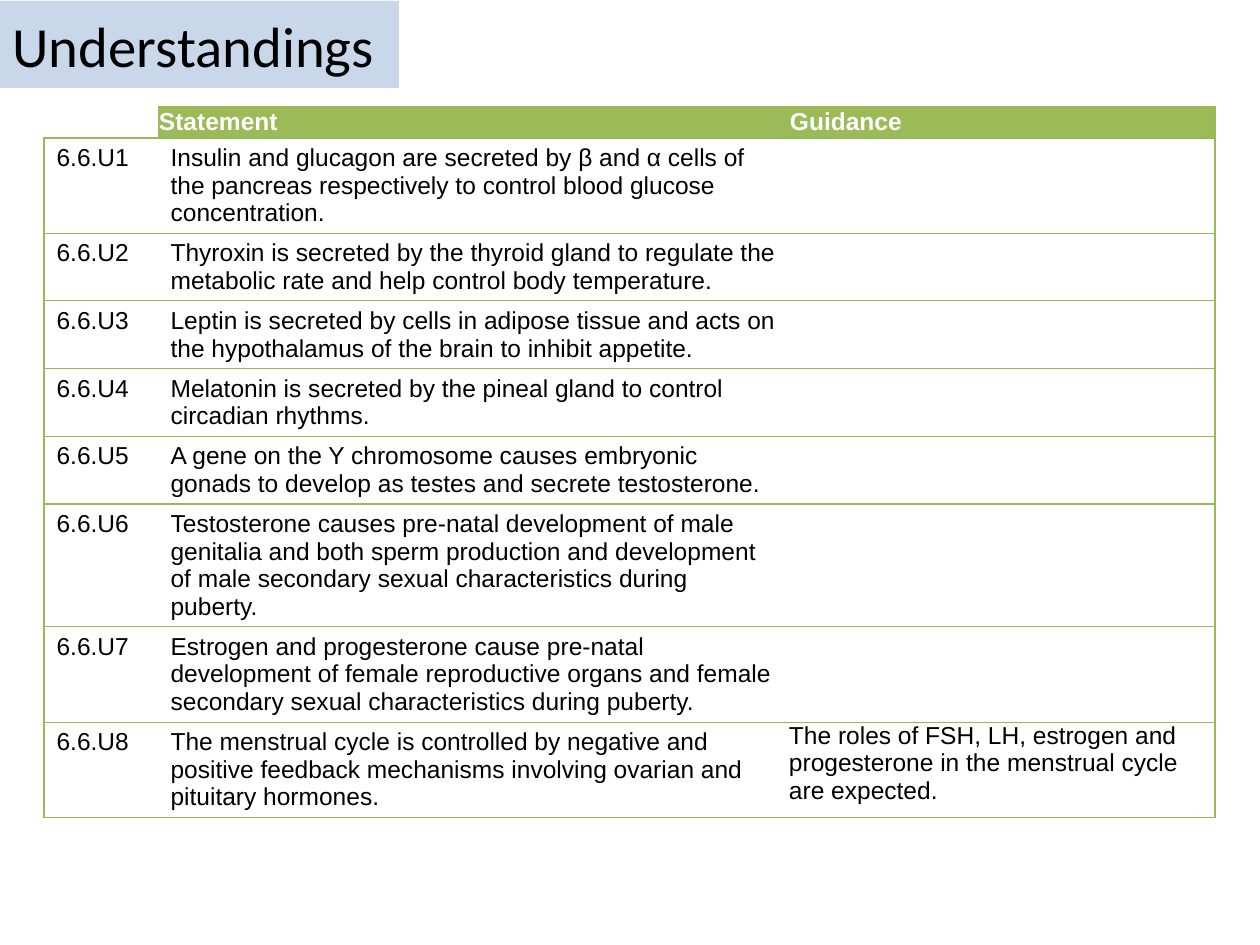
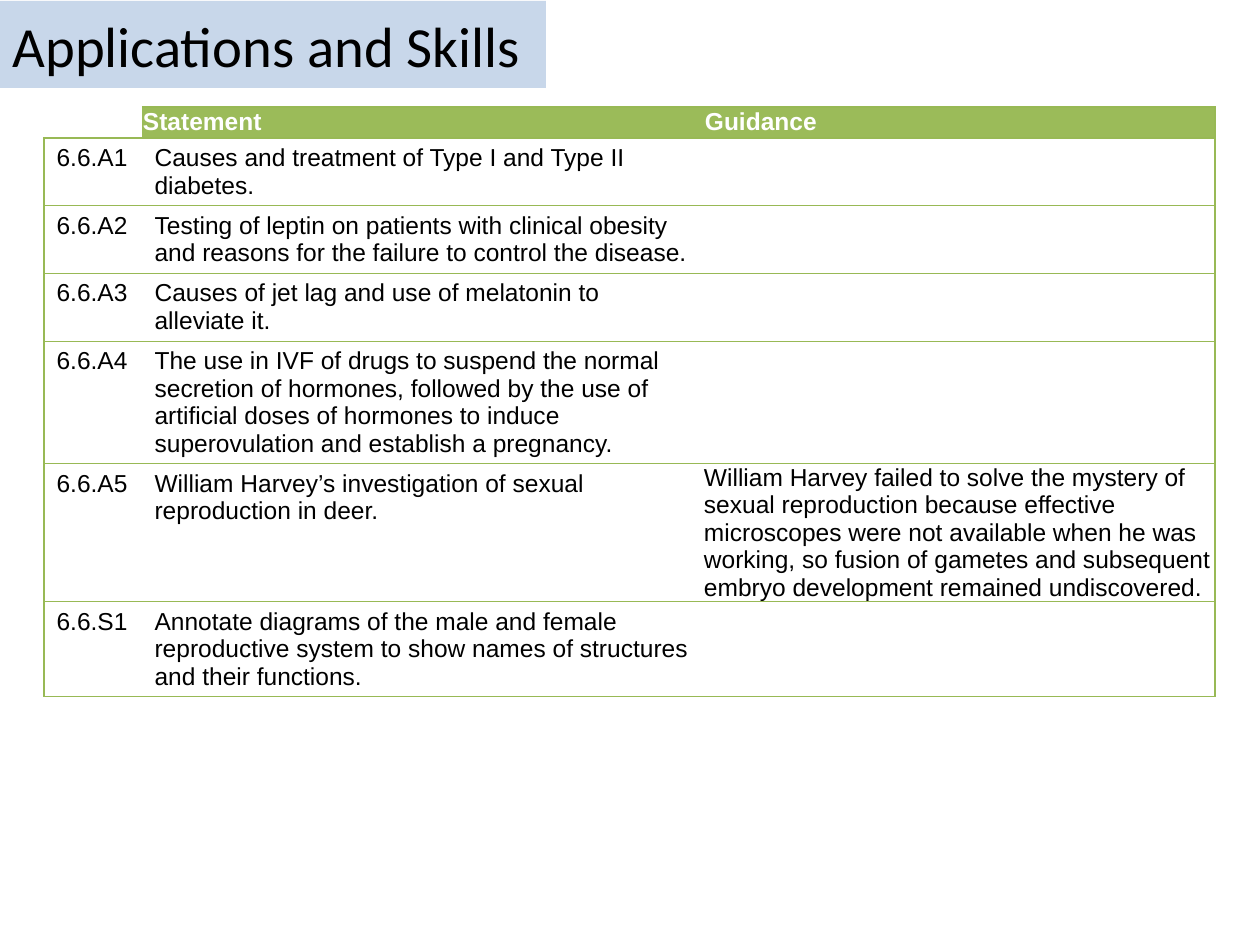
import pptx
import pptx.util
import pptx.dml.color
import pptx.enum.text
import pptx.oxml
import pptx.oxml.ns

PX = pptx.util.Inches(1) / 126
TITLE_ONLY = 5
NO_GRID_STYLE = "{2D5ABB26-0587-4C30-8999-92F81FD0307C}"
BODY_FONT = "Arial"
BODY_SIZE = 14
COLOURS = {
    "title_band": "B9CDE5",
    "header": "9BBB59",
    "rule": "98B955",
    "paper": "FFFFFF",
    "ink": "000000",
}
TABLE_LEFT, TABLE_TOP, HEADER_HEIGHT = 44, 107, 31

UNDERSTANDINGS = [
    ("6.6.U1", "Insulin and glucagon are secreted by β and α cells of the pancreas "
     "respectively to control blood glucose concentration.", "", 95),
    ("6.6.U2", "Thyroxin is secreted by the thyroid gland to regulate the metabolic "
     "rate and help control body temperature.", "", 67),
    ("6.6.U3", "Leptin is secreted by cells in adipose tissue and acts on the "
     "hypothalamus of the brain to inhibit appetite.", "", 67),
    ("6.6.U4", "Melatonin is secreted by the pineal gland to control circadian "
     "rhythms.", "", 67),
    ("6.6.U5", "A gene on the Y chromosome causes embryonic gonads to develop as "
     "testes and secrete testosterone.", "", 67),
    ("6.6.U6", "Testosterone causes pre-natal development of male genitalia and both "
     "sperm production and development of male secondary sexual characteristics "
     "during puberty.", "", 122),
    ("6.6.U7", "Estrogen and progesterone cause pre-natal development of female "
     "reproductive organs and female secondary sexual characteristics during "
     "puberty.", "", 95),
    ("6.6.U8", "The menstrual cycle is controlled by negative and positive feedback "
     "mechanisms involving ovarian and pituitary hormones.",
     "The roles of FSH, LH, estrogen and progesterone in the menstrual cycle are "
     "expected.", 95),
]

APPLICATIONS = [
    ("6.6.A1", "Causes and treatment of Type I and Type II diabetes.", "", 67),
    ("6.6.A2", "Testing of leptin on patients with clinical obesity and reasons for "
     "the failure to control the disease.", "", 67),
    ("6.6.A3", "Causes of jet lag and use of melatonin to alleviate it.", "", 67),
    ("6.6.A4", "The use in IVF of drugs to suspend the normal secretion of hormones, "
     "followed by the use of artificial doses of hormones to induce superovulation "
     "and establish a pregnancy.", "", 122),
    ("6.6.A5", "William Harvey’s investigation of sexual reproduction in deer.",
     "William Harvey failed to solve the mystery of sexual reproduction because "
     "effective microscopes were not available when he was working, so fusion of "
     "gametes and subsequent embryo development remained undiscovered.", 137),
    ("6.6.S1", "Annotate diagrams of the male and female reproductive system to show "
     "names of structures and their functions.", "", 95),
]


def px(length):
    return round(length * PX)


def rgb(name):
    return pptx.dml.color.RGBColor.from_string(COLOURS[name])


def write_text(frame, text, font=BODY_FONT, size=BODY_SIZE, colour="ink", bold=False):
    paragraph = frame.paragraphs[0]
    paragraph.alignment = pptx.enum.text.PP_ALIGN.LEFT
    if not text:
        end = pptx.oxml.ns.qn("a:endParaRPr")
        paragraph._p.append(paragraph._p.makeelement(end, {"sz": str(size * 100)}))
        return
    run = paragraph.add_run()
    run.text = text
    run.font.name = font
    run.font.size = pptx.util.Pt(size)
    run.font.bold = bold
    run.font.color.rgb = rgb(colour)


def fill_solid(fill, colour, opacity=None):
    fill.solid()
    fill.fore_color.rgb = rgb(colour)
    if opacity is not None:
        colour_node = fill._xPr.find(".//" + pptx.oxml.ns.qn("a:srgbClr"))
        alpha = pptx.oxml.ns.qn("a:alpha")
        colour_node.append(colour_node.makeelement(alpha, {"val": str(opacity * 1000)}))


def add_title(slide, text, width):
    title = slide.shapes.title
    title.left, title.top, title.width, title.height = 0, px(1), px(width), px(87)
    fill_solid(title.fill, "title_band", opacity=78)
    frame = title.text_frame
    frame.auto_size = pptx.enum.text.MSO_AUTO_SIZE.NONE
    frame.vertical_anchor = pptx.enum.text.MSO_ANCHOR.MIDDLE
    write_text(frame, text, font="Calibri", size=32.4)


def set_borders(cell, sides):
    properties = cell._tc.get_or_add_tcPr()
    for side in sides:
        properties.append(pptx.oxml.parse_xml(
            f'<a:ln{side} {pptx.oxml.ns.nsdecls("a")} w="{pptx.util.Pt(0.75)}">'
            f'<a:solidFill><a:srgbClr val="{COLOURS["rule"]}"/></a:solidFill>'
            f'</a:ln{side}>'))


def set_margins(cell, side, bottom=0):
    cell.margin_left = cell.margin_right = cell.margin_top = px(side)
    cell.margin_bottom = px(bottom)


def format_header(cell, text, column):
    set_margins(cell, 1)
    if column == 0:
        cell.fill.background()
    else:
        set_borders(cell, "RT" if column == 2 else "T")
        fill_solid(cell.fill, "header")
    write_text(cell.text_frame, text, colour="paper", bold=True)


def format_entry(cell, text, column):
    if column == 2:
        set_margins(cell, 0)
    set_borders(cell, ("LTB", "TB", "RTB")[column])
    fill_solid(cell.fill, "paper")
    write_text(cell.text_frame, text)


def add_statement_table(slide, entries, widths):
    heights = [HEADER_HEIGHT] + [entry[-1] for entry in entries]
    table = slide.shapes.add_table(
        len(heights), len(widths), px(TABLE_LEFT), px(TABLE_TOP),
        px(sum(widths)), px(sum(heights))).table
    table._tbl.tblPr.find(pptx.oxml.ns.qn("a:tableStyleId")).text = NO_GRID_STYLE
    table.horz_banding = False
    for column, width in zip(table.columns, widths):
        column.width = px(width)
    for row, height in zip(table.rows, heights):
        row.height = px(height)
    for column, heading in enumerate(("", "Statement", "Guidance")):
        format_header(table.cell(0, column), heading, column)
    for row, entry in enumerate(entries, start=1):
        for column, text in enumerate(entry[:3]):
            format_entry(table.cell(row, column), text, column)


def add_syllabus_slide(deck, title, title_width, entries, widths):
    slide = deck.slides.add_slide(deck.slide_layouts[TITLE_ONLY])
    add_title(slide, title, title_width)
    add_statement_table(slide, entries, widths)


def main():
    deck = pptx.Presentation()
    deck.slide_width, deck.slide_height = px(1260), px(945)
    add_syllabus_slide(deck, "Understandings", 399, UNDERSTANDINGS, (114, 631, 426))
    add_syllabus_slide(deck, "Applications and Skills", 546, APPLICATIONS, (98, 562, 511))
    deck.save("out.pptx")


if __name__ == "__main__":
    main()
